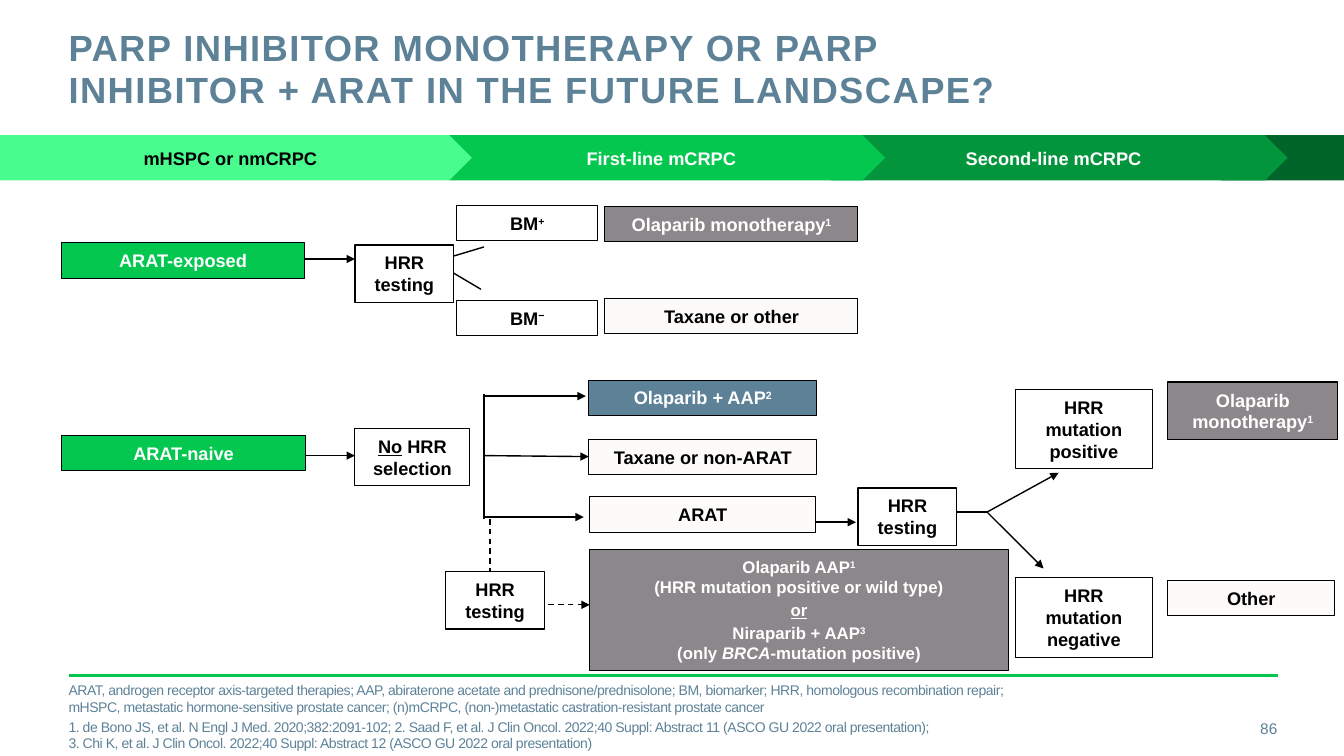
from dataclasses import dataclass
from typing import NamedTuple

from lxml import etree
from pptx import Presentation
from pptx.dml.color import RGBColor
from pptx.enum import dml, shapes, text
from pptx.oxml import ns
from pptx.util import Inches, Pt

FONT = "Arial"
BLACK, WHITE, IVORY = "000000", "FFFFFF", "FCFBF9"
GREEN, GREY, BLUE = "03C74F", "8B878B", "5D8298"
BAND_TOP, BAND_HEIGHT = 1.34, 0.45
ONE_LINE, TWO_LINES, THREE_LINES = 0.35, 0.57, 0.79
LEFT, CENTER, RIGHT = text.PP_ALIGN.LEFT, text.PP_ALIGN.CENTER, text.PP_ALIGN.RIGHT


class Span(NamedTuple):
    text: str
    raised: bool = False
    underline: bool = False
    italic: bool = False


Paragraphs = list[list[Span]]


class Style(NamedTuple):
    size: float
    color: str
    bold: bool = True
    align: int = CENTER
    spacing: int = 0  # letter spacing, hundredths of a point
    space_before: float = 0


@dataclass
class Box:
    left: float
    top: float
    width: float
    height: float
    spans: list[Span]
    fill: str | None = None
    color: str = BLACK
    border: float = 0.75


@dataclass
class Stage:
    left: float
    width: float
    fill: str
    label: str
    color: str = WHITE
    point: float = 0.5


@dataclass
class Link:
    start: tuple[float, float]
    end: tuple[float, float]
    arrow: bool = True
    dashed: bool = False
    color: str = BLACK
    weight: float = 1


def rgb(value: str) -> RGBColor:
    return RGBColor.from_string(value)


def write(frame, paragraphs: Paragraphs, style: Style, insets=(0, 0),
          anchor=text.MSO_ANCHOR.MIDDLE) -> None:
    frame.word_wrap = True
    frame.auto_size = text.MSO_AUTO_SIZE.NONE
    frame.vertical_anchor = anchor
    frame.margin_left = frame.margin_right = Inches(insets[0])
    frame.margin_top = frame.margin_bottom = Inches(insets[1])
    for index, spans in enumerate(paragraphs):
        para = frame.add_paragraph() if index else frame.paragraphs[0]
        para.alignment = style.align
        if index:
            para.space_before = Pt(style.space_before)
        for span in spans:
            for number, line in enumerate(span.text.split("\n")):
                if number:
                    para.add_line_break()
                if line:
                    add_run(para, span, line, style)


def add_run(para, span: Span, line: str, style: Style) -> None:
    run = para.add_run()
    run.text = line
    font = run.font
    font.name, font.size, font.bold = FONT, Pt(style.size), style.bold
    font.color.rgb = rgb(style.color)
    if span.underline:
        font.underline = True
    if span.italic:
        font.italic = True
    properties = run._r.get_or_add_rPr()
    if span.raised:
        properties.set("baseline", "30000")
    if style.spacing:
        properties.set("spc", str(style.spacing))


def add_plain_text(page, bounds: tuple, paragraphs: Paragraphs, style: Style) -> None:
    box = page.shapes.add_textbox(*map(Inches, bounds))
    write(box.text_frame, paragraphs, style)


def add_shape(page, kind, bounds: tuple, fill: str | None, border: float = 0):
    shape = page.shapes.add_shape(kind, *map(Inches, bounds))
    shape.shadow.inherit = False
    if fill:
        shape.fill.solid()
        shape.fill.fore_color.rgb = rgb(fill)
    else:
        shape.fill.background()
    if border:
        shape.line.color.rgb = rgb(BLACK)
        shape.line.width = Pt(border)
    else:
        shape.line.fill.background()
    return shape


def add_box(page, box: Box) -> None:
    bounds = (box.left, box.top, box.width, box.height)
    shape = add_shape(page, shapes.MSO_SHAPE.RECTANGLE, bounds, box.fill, box.border)
    write(shape.text_frame, [box.spans], Style(13, box.color), (0.13, 0.07))


def add_stage(page, stage: Stage) -> None:
    bounds = (stage.left, BAND_TOP, stage.width, BAND_HEIGHT)
    shape = add_shape(page, shapes.MSO_SHAPE.PENTAGON, bounds, stage.fill)
    shape.adjustments[0] = stage.point
    if stage.label:
        write(shape.text_frame, [[Span(stage.label)]], Style(13, stage.color), (0.1, 0.05))


def add_link(page, link: Link) -> None:
    line = page.shapes.add_connector(shapes.MSO_CONNECTOR.STRAIGHT,
                                     *map(Inches, link.start + link.end))
    line.line.color.rgb = rgb(link.color)
    line.line.width = Pt(link.weight)
    if link.dashed:
        line.line.dash_style = dml.MSO_LINE.DASH
    if link.arrow:
        etree.SubElement(line.line._get_or_add_ln(), ns.qn("a:tailEnd"), type="triangle")
    etree.SubElement(line._element.spPr, ns.qn("a:effectLst"))


def hrr_testing(left: float, top: float) -> Box:
    return Box(left, top, 0.98, TWO_LINES, [Span("HRR testing")], WHITE, border=1)


FORK = (9.79, 5.08)
LINKS = [
    Link((0.68, 6.7), (12.68, 6.7), arrow=False, color=GREEN, weight=2),
    Link((2.92, 2.57), (3.52, 2.57)), Link((2.92, 4.52), (3.52, 4.52)),
    Link((4.4, 2.57), (4.8, 2.45), arrow=False), Link((4.5, 2.71), (4.77, 2.87), arrow=False),
    Link((4.8, 3.91), (4.8, 5.15), arrow=False), Link((4.81, 3.93), (5.81, 3.93)),
    Link((4.8, 4.52), (5.84, 4.53)), Link((4.81, 5.13), (5.79, 5.13)),
    Link((7.98, 5.18), (8.49, 5.18)), Link((9.37, 5.08), FORK, arrow=False),
    Link(FORK, (10.5, 4.69)), Link(FORK, (10.35, 5.64)),
    Link((4.86, 5.15), (4.86, 5.96), arrow=False, dashed=True),
    Link((4.86, 6), (5.85, 6), dashed=True),
]
MONOTHERAPY = [Span("Olaparib monotherapy"), Span("1", raised=True)]
BOXES = [
    Box(0.61, 2.41, 2.41, ONE_LINE, [Span("ARAT-exposed")], GREEN, WHITE),
    Box(0.61, 4.32, 2.42, ONE_LINE, [Span("ARAT-naive")], GREEN, WHITE),
    hrr_testing(3.52, 2.43), hrr_testing(8.51, 4.84), hrr_testing(4.42, 5.67),
    Box(4.53, 2.04, 1.4, ONE_LINE, [Span("BM"), Span("+", raised=True)]),
    Box(4.53, 2.98, 1.4, ONE_LINE, [Span("BM"), Span("−", raised=True)]),
    Box(6, 2.05, 2.51, ONE_LINE, MONOTHERAPY, GREY, WHITE),
    Box(6, 2.96, 2.51, ONE_LINE, [Span("Taxane or other")], IVORY),
    Box(3.52, 4.25, 1.14, TWO_LINES, [Span("No", underline=True), Span(" HRR selection")]),
    Box(5.84, 3.77, 2.26, ONE_LINE, [Span("Olaparib + AAP"), Span("2", raised=True)], BLUE, WHITE),
    Box(5.84, 4.36, 2.26, ONE_LINE, [Span("Taxane or non-ARAT")], IVORY),
    Box(5.85, 4.93, 2.24, ONE_LINE, [Span("ARAT")], IVORY),
    Box(10.07, 3.86, 1.36, THREE_LINES, [Span("HRR mutation positive")]),
    Box(10.07, 5.73, 1.36, THREE_LINES, [Span("HRR mutation negative")]),
    Box(11.58, 3.79, 1.69, TWO_LINES, MONOTHERAPY, GREY, WHITE),
    Box(11.58, 5.76, 1.66, ONE_LINE, [Span("Other")], IVORY),
]
STAGES = [
    Stage(12.11, 1.22, "016428", "", point=0),
    Stage(8.24, 4.53, "02953B", "Second-line mCRPC"),
    Stage(4.45, 4.33, GREEN, "First-line mCRPC"),
    Stage(0, 4.68, "49FC8E", "mHSPC or nmCRPC", BLACK),
]
COMBINATIONS = [
    [Span("Olaparib AAP"), Span("1", raised=True), Span("\n(HRR mutation positive or wild type)")],
    [Span("or", underline=True)],
    [Span("Niraparib + AAP"), Span("3", raised=True), Span("\n(only "),
     Span("BRCA", italic=True), Span("-mutation positive)")],
]
FOOTNOTES = [
    [Span("ARAT, androgen receptor axis-targeted therapies; AAP, abiraterone acetate and prednisone/prednisolone; BM, biomarker; HRR, homologous recombination repair;\nmHSPC, metastatic hormone-sensitive prostate cancer; (n)mCRPC, (non-)metastatic castration-resistant prostate cancer")],
    [Span("1. de Bono JS, et al. N Engl J Med. 2020;382:2091-102; 2. Saad F, et al. J Clin Oncol. 2022;40 Suppl: Abstract 11 (ASCO GU 2022 oral presentation);\n3. Chi K, et al. J Clin Oncol. 2022;40 Suppl: Abstract 12 (ASCO GU 2022 oral presentation)")],
]


def main() -> None:
    deck = Presentation()
    deck.slide_width, deck.slide_height = Inches(13.33), Inches(7.5)
    page = deck.slides.add_slide(deck.slide_layouts[5])
    title = page.shapes.title
    title.left, title.top, title.width, title.height = map(Inches, (0.68, 0.27, 9.93, 0.88))
    heading = "PARP INHIBITOR MONOTHERAPY OR PARP INHIBITOR + ARAT IN THE FUTURE LANDSCAPE?"
    write(title.text_frame, [[Span(heading)]], Style(26, BLUE, align=LEFT, spacing=100),
          anchor=text.MSO_ANCHOR.TOP)
    title.text_frame.paragraphs[0].line_spacing = Pt(30)
    for link in LINKS:
        add_link(page, link)
    for box in BOXES:
        add_box(page, box)
    for stage in STAGES:
        add_stage(page, stage)
    options = add_shape(page, shapes.MSO_SHAPE.RECTANGLE, (5.85, 5.45, 4.15, 1.2), GREY, 0.75)
    write(options.text_frame, COMBINATIONS, Style(12, WHITE, space_before=2), (0.13, 0.07))
    add_plain_text(page, (0.68, 6.91, 12.09, 0.4), FOOTNOTES,
                   Style(10, BLUE, False, LEFT, -30, 2))
    add_plain_text(page, (11.81, 7.03, 0.86, 0.4), [[Span("86")]], Style(11, BLUE, False, RIGHT))
    deck.save("out.pptx")


if __name__ == "__main__":
    main()
